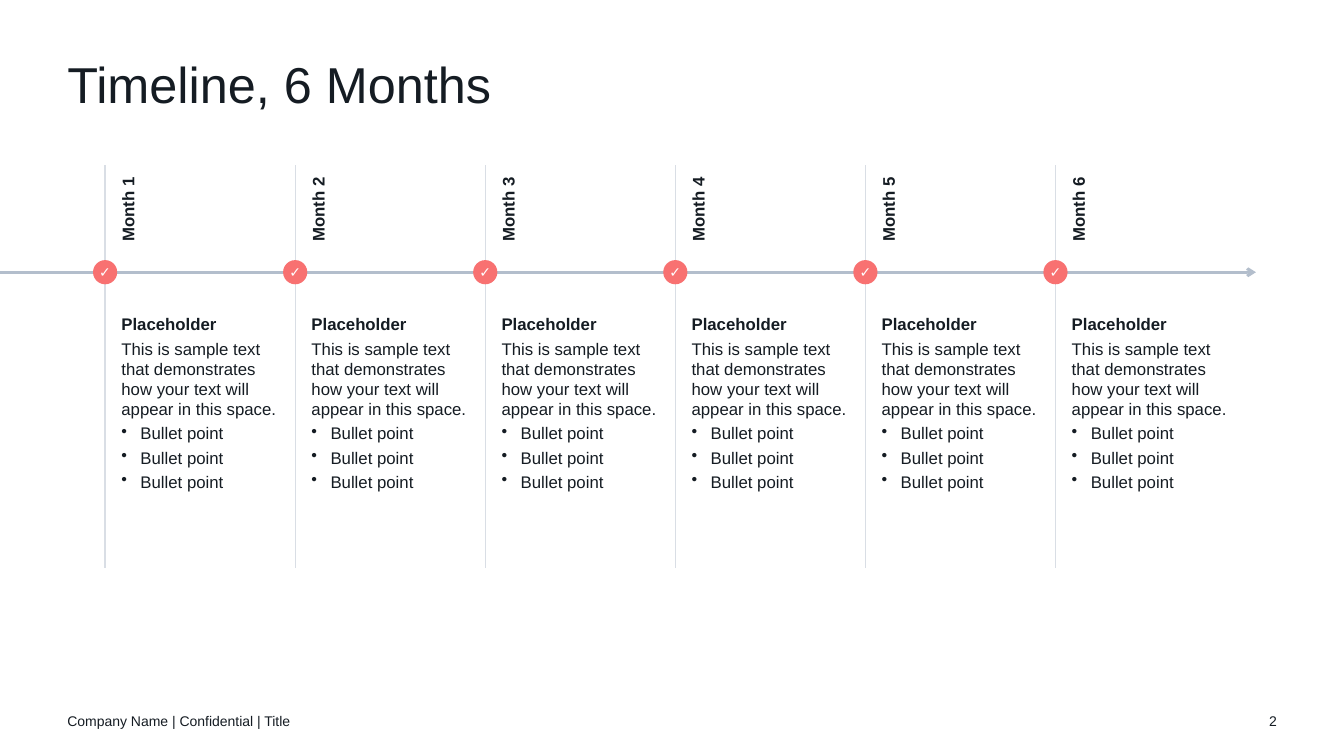
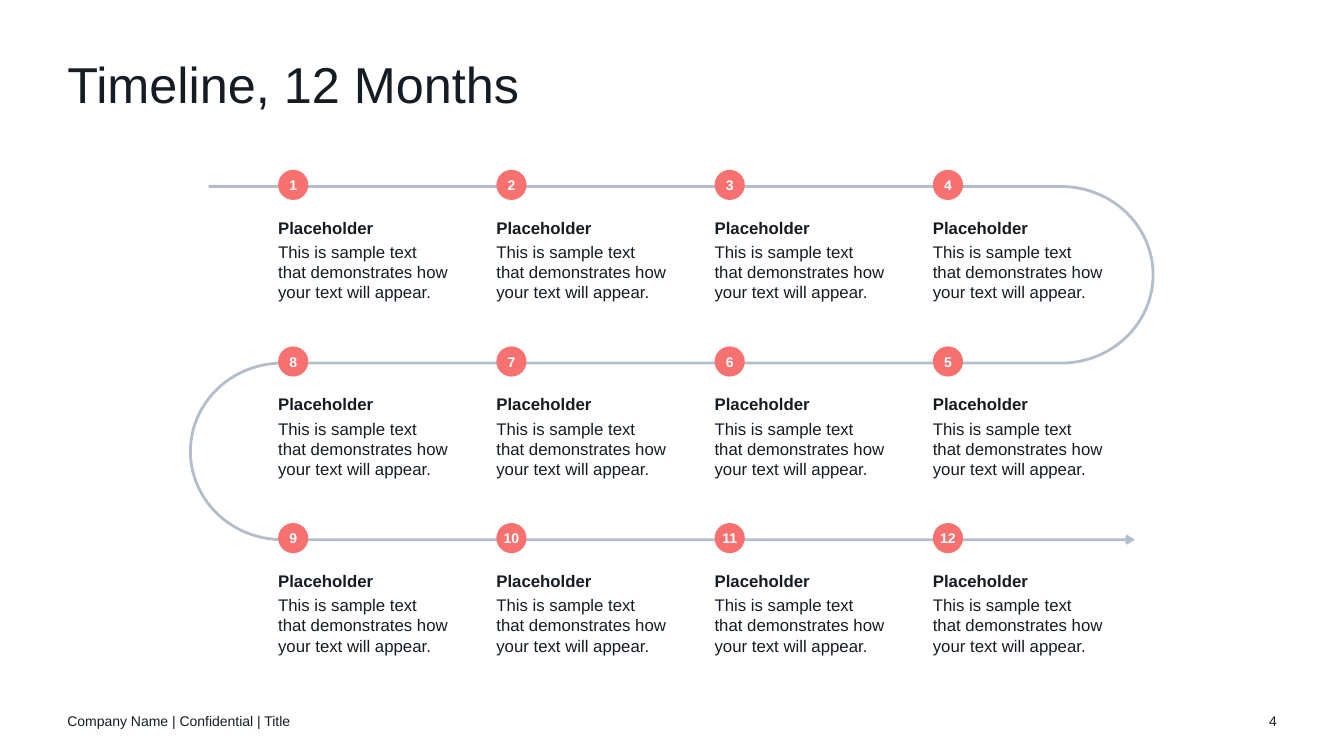
from collections import namedtuple

from pptx import Presentation
from pptx import util as u
from pptx.dml.color import RGBColor
from pptx.enum import shapes, text
from pptx.oxml import ns
from pptx.oxml.xmlchemy import OxmlElement

# All boxes are in centimetres.
Box = namedtuple("Box", "left top width height")

FONT = "Arial"
INK, WHITE, CORAL = "151C23", "FFFFFF", "F87171"
PATH_GREY, RULE_GREY = "B3BECC", "D9DEE5"
TITLE_BOX = Box(1.7, 1.52, 30.48, 1.52)
FOOTER_BOX = Box(1.7, 17.65, 11.43, 1.02)
NUMBER_BOX = Box(30.91, 17.65, 1.27, 1.02)
FOOTER = "Company Name | Confidential | Title"
SAMPLE = "This is sample text that demonstrates how your text will appear"


def cm(*values):
    return [u.Cm(value) for value in values]


def paint(fill, hex_color):
    """Give a shape, line or font fill a solid colour."""
    fill.solid()
    fill.fore_color.rgb = RGBColor.from_string(hex_color)


def add_xml(parent, tag, **attributes):
    child = OxmlElement(tag)
    for name, value in attributes.items():
        child.set(name, str(value))
    parent.append(child)
    return child


def write(shape, words, size=12, bold=False, hex_color=INK, align=text.PP_ALIGN.LEFT,
          after=0, line_spacing=None, bullet=False):
    """Add one formatted paragraph to the text of a shape."""
    frame = shape.text_frame
    paragraph = frame.paragraphs[-1]
    if paragraph.runs:
        paragraph = frame.add_paragraph()
    paragraph.alignment = align
    paragraph.space_after = u.Pt(after)
    if line_spacing:
        paragraph.line_spacing = line_spacing
    if bullet:
        properties = paragraph._p.get_or_add_pPr()
        indent = u.Cm(0.48)
        properties.set("marL", str(indent))
        properties.set("indent", str(-indent))
        add_xml(properties, "a:buChar", char="•")
    run = paragraph.add_run()
    run.text = words
    run.font.name = FONT
    run.font.size = u.Pt(size)
    run.font.bold = bold
    paint(run.font.fill, hex_color)


def set_frame(shape, anchor):
    frame = shape.text_frame
    frame.word_wrap = True
    frame.vertical_anchor = anchor
    frame.margin_left = frame.margin_top = frame.margin_right = frame.margin_bottom = 0


def add_text_box(slide, box, anchor=text.MSO_ANCHOR.TOP):
    shape = slide.shapes.add_textbox(*cm(*box))
    set_frame(shape, anchor)
    return shape


def style_line(shape, hex_color, width, arrow_tag=None):
    paint(shape.line.fill, hex_color)
    shape.line.width = u.Pt(width)
    if arrow_tag:
        add_xml(shape.element.spPr.find(ns.qn("a:ln")), arrow_tag, type="arrow")


def add_line(slide, start, end, hex_color, width, arrow_tag=None):
    line = slide.shapes.add_connector(shapes.MSO_CONNECTOR.STRAIGHT, *cm(*start, *end))
    style_line(line, hex_color, width, arrow_tag)
    add_xml(line.element.spPr, "a:effectLst")


def add_marker(slide, center_x, center_y, diameter, label):
    """Place a coral dot with a short white label around a centre."""
    radius = diameter / 2
    dot = slide.shapes.add_shape(
        shapes.MSO_SHAPE.OVAL,
        *cm(center_x - radius, center_y - radius, diameter, diameter))
    dot.shadow.inherit = False
    paint(dot.fill, CORAL)
    dot.line.fill.background()
    set_frame(dot, text.MSO_ANCHOR.MIDDLE)
    write(dot, label, size=10, bold=True, hex_color=WHITE, align=text.PP_ALIGN.CENTER)


def add_note(slide, box, body, bullets=()):
    note = add_text_box(slide, box)
    write(note, "Placeholder", bold=True, after=3)
    write(note, body, after=3)
    for bullet in bullets:
        write(note, bullet, after=3, bullet=True)


def add_base_slide(presentation, title, number):
    """Add a blank slide with the shared title and footer."""
    slide = presentation.slides.add_slide(presentation.slide_layouts[6])
    paint(slide.background.fill, WHITE)
    write(add_text_box(slide, TITLE_BOX), title, size=36, line_spacing=0.9)
    middle = text.MSO_ANCHOR.MIDDLE
    write(add_text_box(slide, FOOTER_BOX, middle), FOOTER, size=10)
    write(add_text_box(slide, NUMBER_BOX, middle), str(number), size=10,
          align=text.PP_ALIGN.RIGHT)
    return slide


def add_month_column(slide, box, axis_y, label):
    """Place one month; the left edge of the box is its rule."""
    add_line(slide, (box.left, box.top), (box.left, box.top + box.height), RULE_GREY, 1)
    add_marker(slide, box.left, axis_y, 0.61, "✓")

    width, height = 1.9, 0.51
    center_x, center_y = box.left + 0.57, box.top + 0.98
    month = add_text_box(
        slide, Box(center_x - width / 2, center_y - height / 2, width, height),
        text.MSO_ANCHOR.BOTTOM)
    month.rotation = 270
    write(month, label, bold=True)

    note_box = Box(box.left + 0.41, axis_y + 1.05, box.width - 0.85, 6.35)
    add_note(slide, note_box, SAMPLE + " in this space.", ["Bullet point"] * 3)


def add_straight_timeline(slide, box, months):
    axis_y = box.top + 2.7
    pitch = box.width / months
    add_line(slide, (0, axis_y), (31.65, axis_y), PATH_GREY, 2, "a:tailEnd")
    for index in range(months):
        column = Box(box.left + index * pitch, box.top, pitch, box.height)
        add_month_column(slide, column, axis_y, f"Month {index + 1}")


def add_winding_path(slide, box):
    """Draw a three-row path inside the box, with a half ellipse at each turn."""
    bend_width, bend_height = 2.32, box.height / 4
    right, bottom = box.left + box.width, box.top + box.height
    middle = box.top + box.height / 2
    right_bend, left_bend = right - bend_width, box.left + bend_width
    corners = [
        (right_bend, box.top),
        (right, box.top + bend_height),
        (right_bend, middle),
        (left_bend, middle),
        (box.left, middle + bend_height),
        (left_bend, bottom),
        (right - 0.46, bottom),
    ]
    builder = slide.shapes.build_freeform(*cm(box.left + 0.46, box.top))
    builder.add_line_segments([cm(*corner) for corner in corners], close=False)
    path = builder.convert_to_shape()
    path.shadow.inherit = False
    path.fill.background()
    style_line(path, PATH_GREY, 2, "a:tailEnd")

    segments = list(path.element.iter(ns.qn("a:lnTo")))
    quarter = 90 * 60000
    # Segment index, start angle and sweep, counted in quarter turns.
    for index, start, sweep in [(1, 3, 1), (2, 0, 1), (4, 3, -1), (5, 2, -1)]:
        parent = segments[index].getparent()
        arc = add_xml(parent, "a:arcTo", wR=u.Cm(bend_width), hR=u.Cm(bend_height),
                      stAng=start * quarter, swAng=sweep * quarter)
        parent.replace(segments[index], arc)


def add_winding_timeline(slide, box, rows=3, columns=4):
    add_winding_path(slide, box)
    diameter, pitch_x = 0.76, 5.5
    pitch_y = box.height / (rows - 1)
    for index in range(rows * columns):
        row, column = divmod(index, columns)
        if row % 2:
            column = columns - 1 - column
        left = box.left + 2.21 + column * pitch_x
        row_y = box.top + row * pitch_y
        add_note(slide, Box(left, row_y + 0.78, 4.32, 2.16), SAMPLE + ".")
        add_marker(slide, left + diameter / 2, row_y - 0.04, diameter, str(index + 1))


def main():
    presentation = Presentation()
    presentation.slide_width, presentation.slide_height = cm(33.87, 19.05)

    six_months = add_base_slide(presentation, "Timeline, 6 Months", 2)
    add_straight_timeline(six_months, Box(2.65, 4.16, 28.74, 10.16), months=6)

    twelve_months = add_base_slide(presentation, "Timeline, 12 Months", 4)
    add_winding_timeline(twelve_months, Box(4.8, 4.7, 24.26, 8.9))

    presentation.save("out.pptx")


if __name__ == "__main__":
    main()
